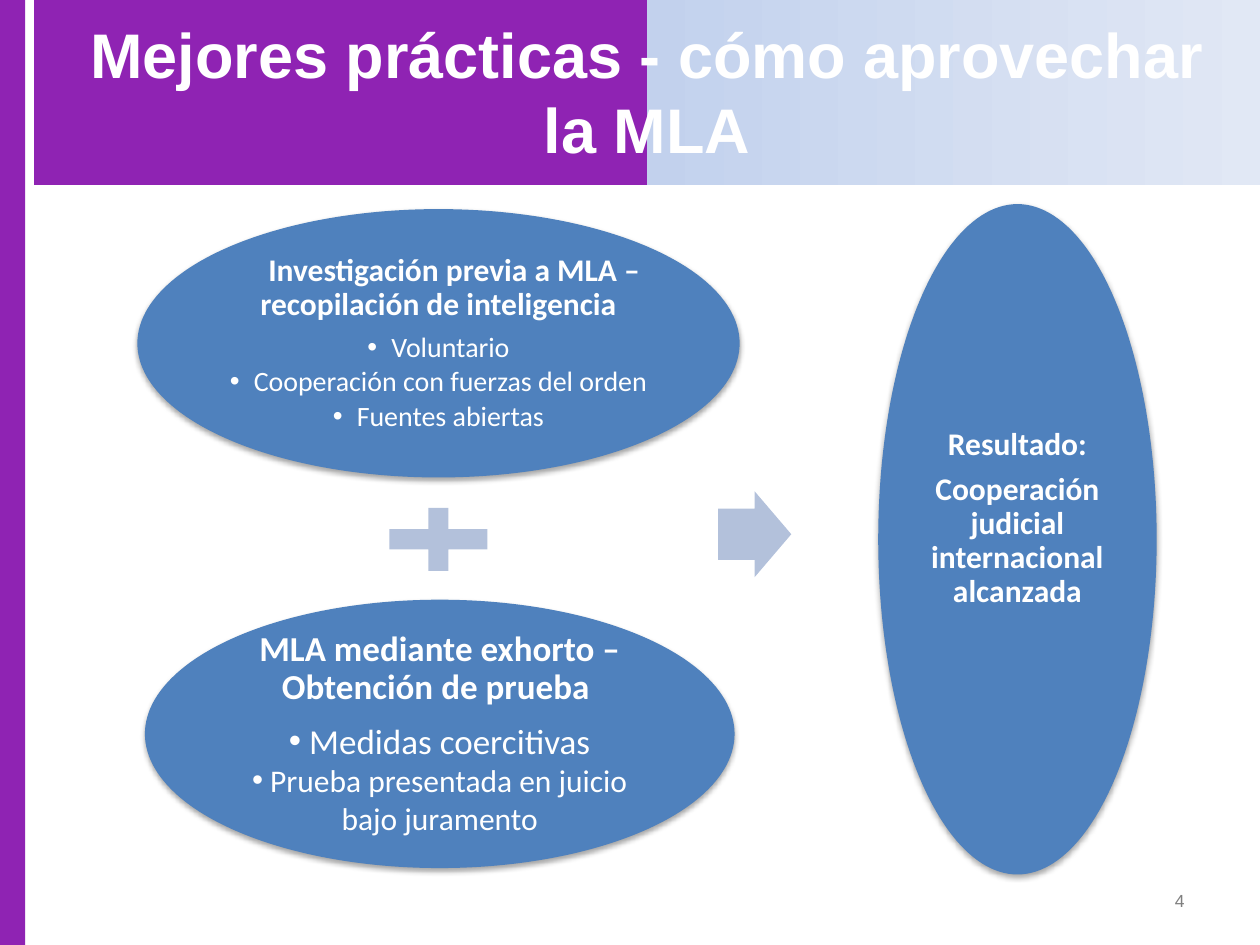
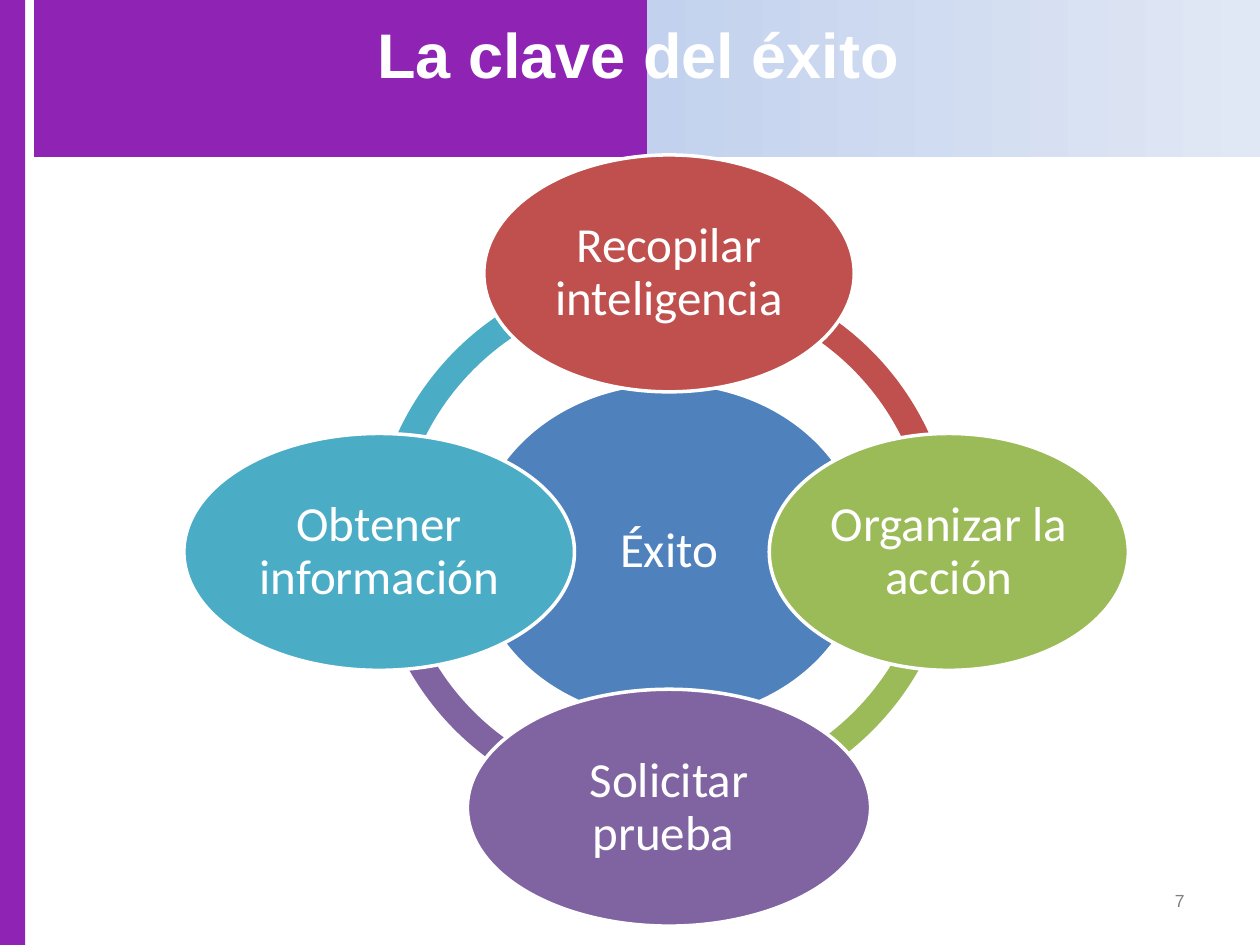
from lxml import etree
from pptx import Presentation
from pptx.dml.color import RGBColor
from pptx.enum import shapes, text
from pptx.oxml import ns
from pptx.util import Inches, Pt

KIND = shapes.MSO_SHAPE
ALIGN = text.PP_ALIGN
PURPLE, WHITE, GREY = "8F23B3", "FFFFFF", "7F7F7F"
BLUE, PALE = "4F81BD", "B3C1DB"
RED, GREEN, VIOLET, TEAL = "C0504D", "9BBB59", "8064A2", "4BACC6"
FADE = [(50, PURPLE), (50, "C2D1ED"), (100, "E1E8F5")]


def rgb(code):
    return RGBColor.from_string(code)


def node(parent, tag, **attrs):
    return etree.SubElement(parent, ns.qn(tag), attrs)


class Deck:
    def __init__(self):
        self.file = Presentation()
        self.file.slide_width = Inches(10)
        self.file.slide_height = Inches(7.5)
        self.slide = None

    def page(self, title, height, number):
        self.slide = self.file.slides.add_slide(self.file.slide_layouts[6])
        self.shape(KIND.RECTANGLE, 0, 0, 0.2, 7.5, PURPLE)
        self.title(title, height)
        box = self.slide.shapes.add_textbox(*map(Inches, (7.17, 6.95, 2.33, 0.4)))
        frame = box.text_frame
        frame.word_wrap = True
        frame.vertical_anchor = text.MSO_ANCHOR.MIDDLE
        self.para(frame, number, 10, face="Arial", color=GREY, align=ALIGN.RIGHT)

    def shape(self, kind, x, y, w, h, fill, edge=None, adjust=()):
        item = self.slide.shapes.add_shape(kind, *map(Inches, (x, y, w, h)))
        item.shadow.inherit = False
        item.fill.solid()
        item.fill.fore_color.rgb = rgb(fill)
        if edge:
            item.line.color.rgb = rgb(edge)
            item.line.width = Pt(2)
        else:
            item.line.fill.background()
        for i, value in enumerate(adjust):
            item.adjustments[i] = value
        return item

    def title(self, words, height):
        band = self.shape(KIND.RECTANGLE, 0.27, 0, 9.73, height, PURPLE)
        band.fill.gradient()
        band.fill.gradient_angle = 0
        stops = band._element.spPr.find(".//" + ns.qn("a:gsLst"))
        for stop in list(stops):
            stops.remove(stop)
        for place, code in FADE:
            stop = node(stops, "a:gs", pos=str(place * 1000))
            node(stop, "a:srgbClr", val=code)
        frame = self.frame(band, (0.2, 0.12, 0.2, 0.08), text.MSO_ANCHOR.TOP)
        self.para(frame, words, 36, bold=True, face="Arial")

    def frame(self, item, pads, anchor=text.MSO_ANCHOR.MIDDLE):
        frame = item.text_frame
        frame.word_wrap = True
        frame.vertical_anchor = anchor
        (frame.margin_left, frame.margin_top,
         frame.margin_right, frame.margin_bottom) = map(Inches, pads)
        return frame

    def para(self, frame, words, size, bold=False, face="Calibri", color=WHITE,
             align=ALIGN.CENTER, line=None, after=0, left=0, first=0, bullet=False):
        para = frame.paragraphs[0]
        if para.runs:
            para = frame.add_paragraph()
        props = para._p.get_or_add_pPr()
        props.set("marL", str(Inches(left)))
        props.set("indent", str(Inches(first)))
        if bullet:
            node(props, "a:buFont", typeface="Arial")
            node(props, "a:buChar", char="•")
        para.alignment = align
        if line:
            para.line_spacing = line
        para.space_after = Pt(round(size * after, 1))
        run = para.add_run()
        run.text = words
        run.font.name = face
        run.font.size = Pt(size)
        run.font.bold = bold
        run.font.color.rgb = rgb(color)

    def shade(self, item):
        effects = item._element.spPr.find(ns.qn("a:effectLst"))
        cast = node(effects, "a:outerShdw", blurRad=str(Pt(3.1)), dist=str(Pt(1.8)),
                    dir="5400000", rotWithShape="0")
        tint = node(cast, "a:srgbClr", val="000000")
        node(tint, "a:alpha", val="35000")

    def oval(self, x, y, w, h, low=0.03):
        item = self.shape(KIND.OVAL, x, y, w, h, BLUE)
        self.shade(item)
        return self.frame(item, (0.03, 0.03, 0.03, low))

    def head(self, frame, words, size=18, first=0):
        self.para(frame, words, size, bold=True, line=0.9, after=0.35, first=first)

    def petal(self, words, x, y, w, h, fill):
        item = self.shape(KIND.OVAL, x - w / 2, y - h / 2, w, h, fill, WHITE)
        frame = self.frame(item, (0.04,) * 4)
        self.para(frame, words, 28, line=0.9)


def inputs(deck):
    deck.page("Mejores prácticas - cómo aprovechar la MLA", 1.47, "4")

    prior = deck.oval(1.09, 1.66, 4.78, 2.13)
    deck.head(prior, "Investigación previa a MLA – recopilación de inteligencia", first=0.25)
    for words in ("Voluntario", "Cooperación con fuerzas del orden ", "Fuentes abiertas"):
        deck.para(prior, words, 16, line=0.9, after=0.15, left=0.19, first=-0.19, bullet=True)

    deck.shape(KIND.MATH_PLUS, 2.95, 3.94, 1.06, 0.68, PALE)

    formal = deck.oval(1.15, 4.76, 4.68, 2.13)
    deck.head(formal, "MLA mediante exhorto – Obtención de prueba ", 20)
    deck.para(formal, " Medidas coercitivas", 20, bullet=True)
    deck.para(formal, " Prueba presentada en juicio bajo juramento", 18, bullet=True)

    deck.shape(KIND.RIGHT_ARROW, 5.7, 3.9, 0.58, 0.68, PALE, adjust=(0.6, 0.5))

    result = deck.oval(6.97, 1.62, 2.21, 5.32, low=0.36)
    deck.head(result, "Resultado:")
    deck.head(result, "Cooperación judicial internacional alcanzada")


def cycle(deck):
    deck.page("La clave del éxito ", 1.25, "7")
    arcs = [
        (2.95, 2.12, 108.1, 163.48, TEAL),
        (2.95, 1.93, 52.41, 105.23, VIOLET),
        (3.06, 1.93, 2.94, 54.13, GREEN),
        (3.05, 2.12, 162, 0, RED),
    ]
    for x, y, start, end, fill in arcs:
        deck.shape(KIND.BLOCK_ARC, x, y, 4.53, 4.53, fill, adjust=(start, end, 0.046))

    mid, level = 5.31, 4.38
    deck.petal("Éxito", mid, level, 3.11, 2.68, BLUE)
    petals = [
        ("Recopilar inteligencia", mid, 2.17, 2.94, RED),
        ("Organizar la acción", 7.53, level, 2.85, GREEN),
        ("Solicitar prueba ", mid, 6.41, 3.2, VIOLET),
        ("Obtener información", 3.01, level, 3.1, TEAL),
    ]
    for words, x, y, width, fill in petals:
        deck.petal(words, x, y, width, 1.88, fill)


def main():
    deck = Deck()
    inputs(deck)
    cycle(deck)
    deck.file.save("out.pptx")


if __name__ == "__main__":
    main()
